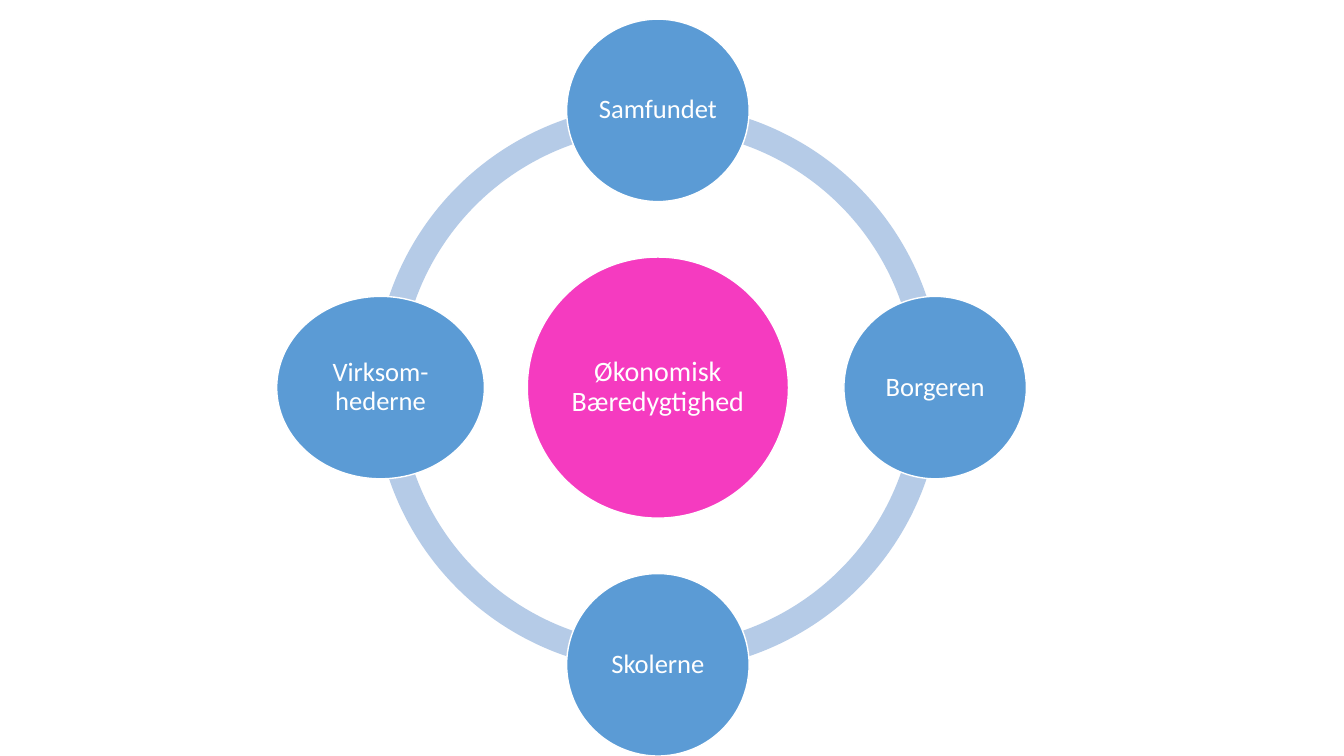
import math

import pptx
import pptx.dml.color
import pptx.enum.shapes
import pptx.enum.text
import pptx.util

Inches = pptx.util.Inches
SHAPES = pptx.enum.shapes.MSO_SHAPE
WHITE = pptx.dml.color.RGBColor(0xFF, 0xFF, 0xFF)
RING_BLUE = pptx.dml.color.RGBColor(0xB5, 0xCB, 0xE7)
ACTOR_BLUE = pptx.dml.color.RGBColor(0x5B, 0x9B, 0xD5)
THEME_PINK = pptx.dml.color.RGBColor(0xF5, 0x3B, 0xC0)

ACTORS = [
    ("Samfundet", 1.81),
    ("Borgeren", 1.81),
    ("Skolerne", 1.81),
    ("Virksom-hederne", 2.06),
]
ACTOR_HEIGHT = 1.81
ORBIT = 2.75
THEME_DIAMETER = 2.59
ARC_THICKNESS = 0.046
DEGREE = 0.6
FRAME_FORMAT = {
    "word_wrap": True,
    "vertical_anchor": pptx.enum.text.MSO_ANCHOR.MIDDLE,
    "margin_left": Inches(0.03),
    "margin_right": Inches(0.03),
    "margin_top": Inches(0.03),
    "margin_bottom": Inches(0.03),
}
PARAGRAPH_FORMAT = {
    "alignment": pptx.enum.text.PP_ALIGN.CENTER,
    "line_spacing": 0.9,
}


def apply_format(target, values):
    """Set each named attribute of the target."""
    for attribute, value in values.items():
        setattr(target, attribute, value)


def add_filled(slide, preset, box, colour):
    """Add a preset shape with a plain fill in the given box."""
    filled = slide.shapes.add_shape(preset, *(Inches(length) for length in box))
    filled.shadow.inherit = False
    filled.fill.solid()
    filled.fill.fore_color.rgb = colour
    return filled


def add_ring(slide, box):
    """Build the ring from four quarter arcs."""
    for start in range(0, 360, 90):
        arc = add_filled(slide, SHAPES.BLOCK_ARC, box, RING_BLUE)
        arc.line.fill.background()
        end = (start + 90) % 360
        for index, value in enumerate((start * DEGREE, end * DEGREE, ARC_THICKNESS)):
            arc.adjustments[index] = value


def add_bubble(slide, centre, size, label, colour, points):
    """Add a labelled ellipse around a centre point."""
    (x, y), (width, height) = centre, size
    box = (x - width / 2, y - height / 2, width, height)
    bubble = add_filled(slide, SHAPES.OVAL, box, colour)
    bubble.line.color.rgb = WHITE
    bubble.line.width = pptx.util.Pt(1)
    apply_format(bubble.text_frame, FRAME_FORMAT)
    paragraph = bubble.text_frame.paragraphs[0]
    apply_format(paragraph, PARAGRAPH_FORMAT)
    run = paragraph.add_run()
    run.text = label
    apply_format(run.font, {"name": "Calibri", "size": pptx.util.Pt(points)})
    run.font.color.rgb = WHITE


def add_radial_cycle(slide, box):
    """Place the ring, the central theme and the actors around it."""
    left, top, width, height = box
    x, y = left + width / 2, top + height / 2
    add_ring(slide, box)
    add_bubble(slide, (x, y), (THEME_DIAMETER, THEME_DIAMETER),
               "Økonomisk Bæredygtighed", THEME_PINK, 20)
    for index, (actor, actor_width) in enumerate(ACTORS):
        angle = math.tau * index / len(ACTORS)
        centre = (x + ORBIT * math.sin(angle), y - ORBIT * math.cos(angle))
        add_bubble(slide, centre, (actor_width, ACTOR_HEIGHT), actor, ACTOR_BLUE, 19)


def main():
    """Build and save the presentation."""
    presentation = pptx.Presentation()
    presentation.slide_width = Inches(13.33)
    presentation.slide_height = Inches(7.5)
    slide = presentation.slides.add_slide(presentation.slide_layouts.get_by_name("Blank"))
    add_radial_cycle(slide, (3.71, 1.03, 5.63, 5.63))
    presentation.save("out.pptx")


if __name__ == "__main__":
    main()
